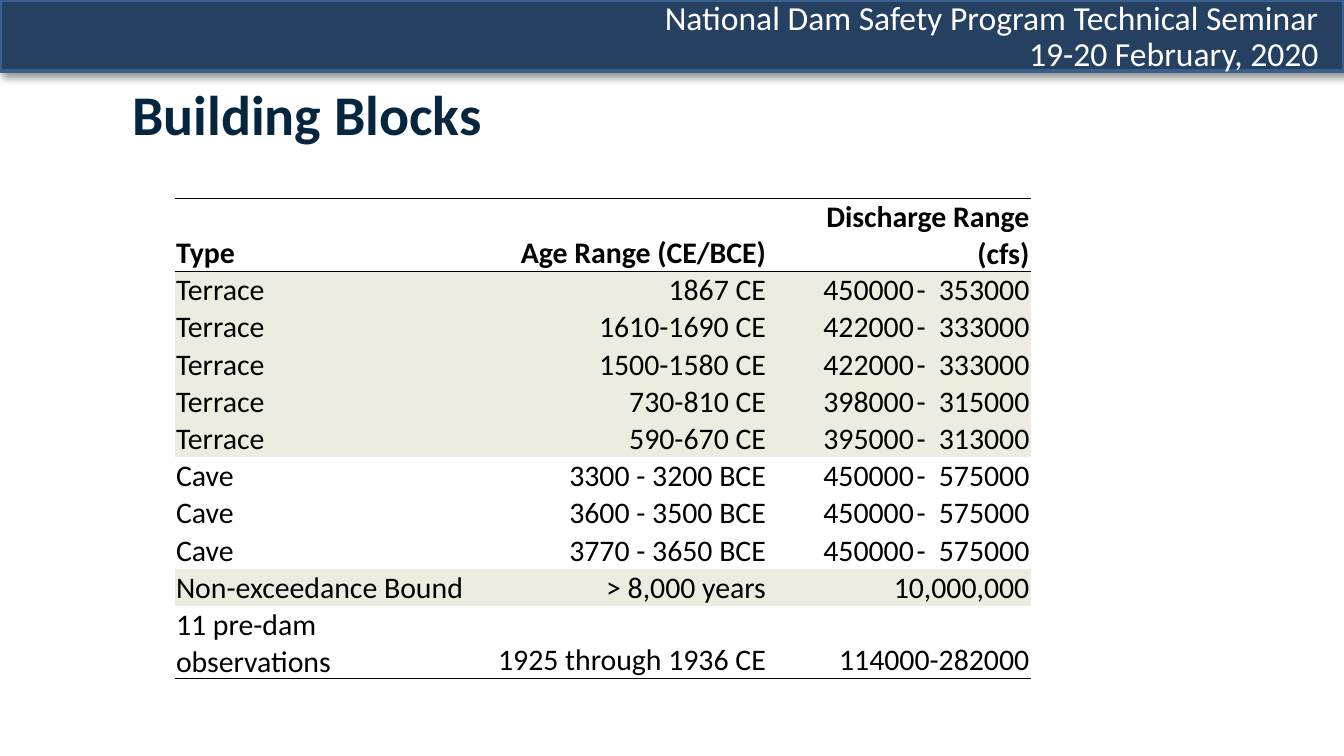
from dataclasses import dataclass

from lxml import etree
from pptx import Presentation
from pptx.dml.color import RGBColor
from pptx.enum.shapes import MSO_SHAPE
from pptx.enum.text import MSO_ANCHOR, MSO_AUTO_SIZE, PP_ALIGN
from pptx.oxml.ns import qn
from pptx.slide import Slide
from pptx.table import Table, _Cell
from pptx.text.text import TextFrame
from pptx.util import Emu, Inches, Pt

RECTANGLE = MSO_SHAPE.RECTANGLE
MIDDLE, BOTTOM = MSO_ANCHOR.MIDDLE, MSO_ANCHOR.BOTTOM
LEFT, CENTER, RIGHT = PP_ALIGN.LEFT, PP_ALIGN.CENTER, PP_ALIGN.RIGHT

BLACK = RGBColor(0x00, 0x00, 0x00)
WHITE = RGBColor(0xFF, 0xFF, 0xFF)
BANNER_FILL = RGBColor(0x25, 0x40, 0x61)
BANNER_LINE = RGBColor(0x3A, 0x5F, 0x8C)
TITLE_NAVY = RGBColor(0x06, 0x26, 0x3F)
SHADE = RGBColor(0xEE, 0xEC, 0xE1)

SLIDE_WIDTH = Inches(10)
SLIDE_HEIGHT = Emu(SLIDE_WIDTH * 9 // 16)


def across(percent: float) -> Emu:
    return Emu(round(SLIDE_WIDTH * percent / 100))


def down(percent: float) -> Emu:
    return Emu(round(SLIDE_HEIGHT * percent / 100))


@dataclass(frozen=True)
class Box:
    """A rectangle in percent of the slide's width and height."""
    left: float
    top: float
    width: float
    height: float

    def lengths(self) -> tuple[Emu, Emu, Emu, Emu]:
        return across(self.left), down(self.top), across(self.width), down(self.height)


@dataclass(frozen=True)
class Row:
    """One table row; a single discharge value spans the discharge columns."""
    kind: str
    age: str
    discharge: tuple[str, ...]
    shaded: bool = False
    bold: bool = False
    line_above: bool = False
    line_below: bool = False


BANNER = Box(0, 0, 100, 9.43)
BANNER_TEXT = Box(40, -0.71, 59.1, 11.57)
TITLE = Box(5.15, 9.43, 35.4, 11.2)
TABLE = Box(13, 26.2, 63.7, 63.64)
COLUMN_WIDTHS = (22.6, 21.5, 11, 1.2, 7.4)
COLUMN_ALIGNMENTS = (LEFT, RIGHT, RIGHT, LEFT, RIGHT)
HEADER_HEIGHT, ROW_HEIGHT = 8.53, 4.62

ROWS = (
    Row("Type", "Age Range (CE/BCE)", ("Discharge Range (cfs)",),
        bold=True, line_above=True, line_below=True),
    Row("Terrace", "1867 CE", ("450000", "-", "353000"), shaded=True, line_above=True),
    Row("Terrace", "1610-1690 CE", ("422000", "-", "333000"), shaded=True),
    Row("Terrace", "1500-1580 CE", ("422000", "-", "333000"), shaded=True),
    Row("Terrace", "730-810 CE", ("398000", "-", "315000"), shaded=True),
    Row("Terrace", "590-670 CE", ("395000", "-", "313000"), shaded=True),
    Row("Cave", "3300 - 3200 BCE", ("450000", "-", "575000")),
    Row("Cave", "3600 - 3500 BCE", ("450000", "-", "575000")),
    Row("Cave", "3770 - 3650 BCE", ("450000", "-", "575000")),
    Row("Non-exceedance Bound", "> 8,000 years", ("10,000,000",), shaded=True),
    Row("11 pre-dam observations", "1925 through 1936 CE", ("114000-282000",),
        line_below=True),
)


def write(frame: TextFrame, text: str, size: float, color: RGBColor,
          alignment: PP_ALIGN, bold: bool = False,
          line_spacing: float | None = None) -> None:
    frame.text = text
    font_format = {"name": "Calibri", "size": Pt(size), "bold": bold}
    for paragraph in frame.paragraphs:
        paragraph.alignment = alignment
        paragraph.line_spacing = line_spacing
        for run in paragraph.runs:
            for attribute, value in font_format.items():
                setattr(run.font, attribute, value)
            run.font.color.rgb = color


def add_shadow(shape_properties: etree._Element) -> None:
    effects = etree.SubElement(shape_properties, qn("a:effectLst"))
    shadow = etree.SubElement(effects, qn("a:outerShdw"), blurRad=str(Pt(4)),
                              dist=str(Pt(3)), dir=str(45 * 60000), rotWithShape="0")
    color = etree.SubElement(shadow, qn("a:srgbClr"), val=str(BLACK))
    etree.SubElement(color, qn("a:alpha"), val="40000")


def add_banner(slide: Slide) -> None:
    banner = slide.shapes.add_shape(RECTANGLE, *BANNER.lengths())
    banner.fill.solid()
    banner.fill.fore_color.rgb = BANNER_FILL
    banner.line.color.rgb = BANNER_LINE
    banner.line.width = Pt(2)
    add_shadow(banner._element.spPr)

    frame = slide.shapes.add_textbox(*BANNER_TEXT.lengths()).text_frame
    frame.word_wrap = True
    frame.auto_size = MSO_AUTO_SIZE.SHAPE_TO_FIT_TEXT
    write(frame, "National Dam Safety Program Technical Seminar\n19-20 February, 2020",
          18, WHITE, RIGHT, line_spacing=0.9)


def set_title(slide: Slide) -> None:
    title = slide.shapes.title
    title.left, title.top, title.width, title.height = TITLE.lengths()
    title.text_frame.vertical_anchor = MIDDLE
    write(title.text_frame, "Building Blocks", 30, TITLE_NAVY, CENTER, bold=True)


def set_borders(cell: _Cell, above: bool, below: bool) -> None:
    properties = cell._tc.get_or_add_tcPr()
    sides = {"a:lnL": False, "a:lnR": False, "a:lnT": above, "a:lnB": below}
    for tag, visible in sides.items():
        line = etree.SubElement(properties, qn(tag), w=str(Pt(0.5)))
        if visible:
            fill = etree.SubElement(line, qn("a:solidFill"))
            etree.SubElement(fill, qn("a:srgbClr"), val=str(BLACK))
        else:
            etree.SubElement(line, qn("a:noFill"))


def format_cell(cell: _Cell, row: Row) -> None:
    cell_format = {"margin_left": Inches(0.01), "margin_right": Inches(0.01),
                   "margin_top": Inches(0.01), "margin_bottom": 0,
                   "vertical_anchor": BOTTOM}
    for attribute, value in cell_format.items():
        setattr(cell, attribute, value)
    set_borders(cell, row.line_above, row.line_below)
    if row.shaded:
        cell.fill.solid()
        cell.fill.fore_color.rgb = SHADE
    else:
        cell.fill.background()


def fill_row(table: Table, index: int, row: Row) -> None:
    cells = [table.cell(index, column) for column in range(len(COLUMN_WIDTHS))]
    for cell in cells:
        format_cell(cell, row)
    if len(row.discharge) == 1:
        cells[2].merge(cells[-1])
    texts = (row.kind, row.age, *row.discharge)
    for cell, text, alignment in zip(cells, texts, COLUMN_ALIGNMENTS):
        write(cell.text_frame, text, 16, BLACK, alignment, row.bold)


def add_flood_table(slide: Slide) -> None:
    frame = slide.shapes.add_table(len(ROWS), len(COLUMN_WIDTHS), *TABLE.lengths())
    table = frame.table
    table.first_row = False
    table.horz_banding = False
    for column, width in zip(table.columns, COLUMN_WIDTHS):
        column.width = across(width)
    for index, row in enumerate(ROWS):
        table.rows[index].height = down(ROW_HEIGHT if index else HEADER_HEIGHT)
        fill_row(table, index, row)
    frame.height = down(TABLE.height)


def main() -> None:
    presentation = Presentation()
    presentation.slide_width, presentation.slide_height = SLIDE_WIDTH, SLIDE_HEIGHT
    slide = presentation.slides.add_slide(presentation.slide_layouts[5])
    add_banner(slide)
    set_title(slide)
    add_flood_table(slide)
    presentation.save("out.pptx")


if __name__ == "__main__":
    main()
